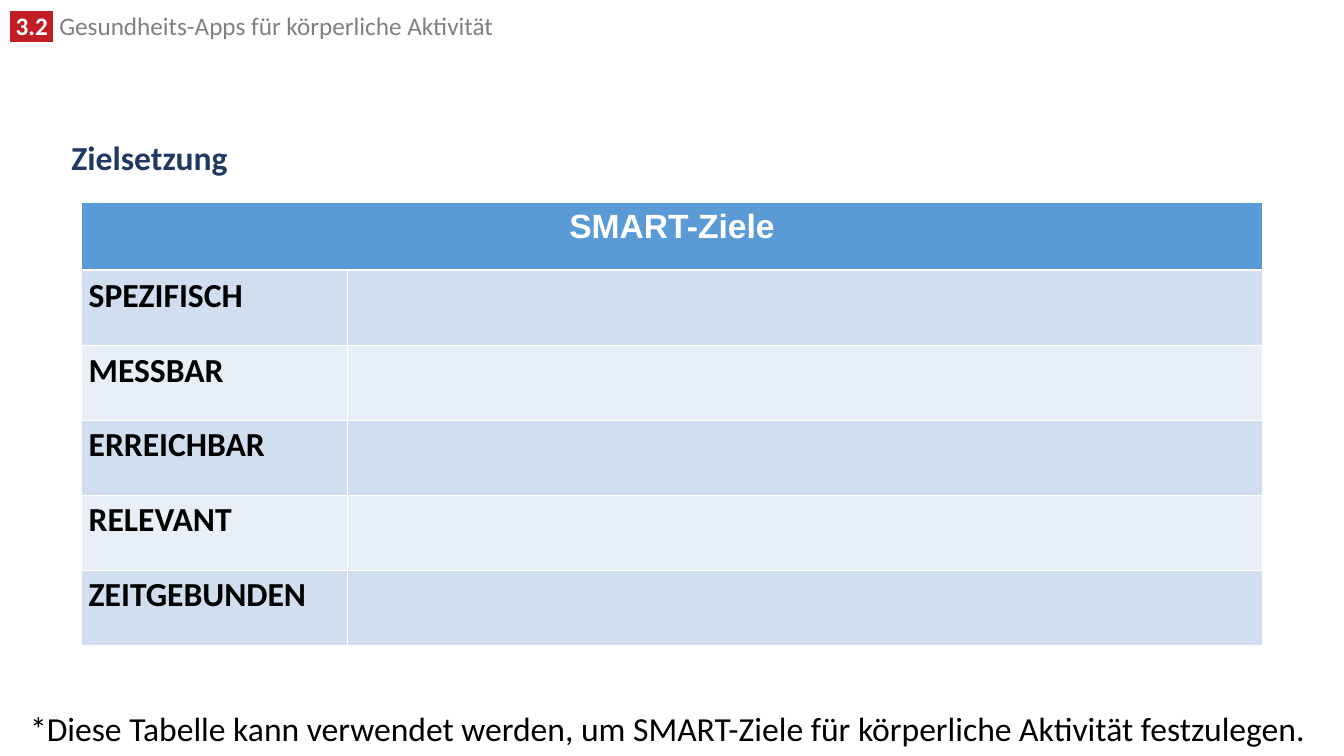
from lxml import etree
from pptx import Presentation, util as u
from pptx.dml.color import RGBColor
from pptx.enum import text
from pptx.oxml.ns import qn

CHAPTER = (" 3.2 ", " Gesundheits-Apps für körperliche Aktivität")
HEADING = "Zielsetzung"
TABLE_TITLE = "SMART-Ziele"
GOALS = ["SPEZIFISCH", "MESSBAR", "ERREICHBAR", "RELEVANT", "ZEITGEBUNDEN"]
FOOTNOTE = ("*Diese Tabelle kann verwendet werden, um SMART-Ziele "
            "für körperliche Aktivität festzulegen.")

WHITE = RGBColor(0xFF, 0xFF, 0xFF)
BLACK = RGBColor(0, 0, 0)
GREY = RGBColor(0x80, 0x80, 0x80)
RED = RGBColor(0xC0, 0x1E, 0x24)
NAVY = RGBColor(0x20, 0x38, 0x64)
BLUE = RGBColor(0x5B, 0x9B, 0xD5)
BANDS = [RGBColor(0xD0, 0xDE, 0xEF), RGBColor(0xE9, 0xEF, 0xF7)]

COLUMNS = (2.64, 9.07)
HEADER_HEIGHT, GOAL_HEIGHT = 0.67, 0.744
THIN, THICK = 0.68, 1.98


def set_font(font, size, color, bold=False, name="Calibri"):
    font.name, font.size, font.bold = name, u.Pt(size), bold
    font.color.rgb = color


def add_text(slide, left, top, width, height, content=""):
    frame = slide.shapes.add_textbox(
        *map(u.Inches, (left, top, width, height))).text_frame
    frame.word_wrap = True
    frame.paragraphs[0].text = content
    return frame


def highlight(run, color):
    mark = etree.Element(qn("a:highlight"))
    etree.SubElement(mark, qn("a:srgbClr"), val=str(color))
    run.font.fill  # the highlight follows the text fill
    run.font._element.find(qn("a:solidFill")).addnext(mark)


def style_cell(cell, fill, top=THIN, bottom=THIN):
    """Fill the cell, set its margins and draw its white borders."""
    cell.fill.solid()
    cell.fill.fore_color.rgb = fill
    cell.margin_left = cell.margin_right = u.Inches(0.07)
    cell.margin_top = cell.margin_bottom = u.Inches(0.05)
    borders = {"a:lnL": THIN, "a:lnR": THIN, "a:lnT": top, "a:lnB": bottom}
    for position, (side, weight) in enumerate(borders.items()):
        line = etree.Element(qn(side), w=str(u.Pt(weight)))
        paint = etree.SubElement(line, qn("a:solidFill"))
        etree.SubElement(paint, qn("a:srgbClr"), val=str(WHITE))
        cell._tc.get_or_add_tcPr().insert(position, line)


def add_goal_table(slide):
    height = HEADER_HEIGHT + GOAL_HEIGHT * len(GOALS)
    table = slide.shapes.add_table(
        len(GOALS) + 1, len(COLUMNS), u.Inches(0.81), u.Inches(2.01),
        u.Inches(sum(COLUMNS)), u.Inches(height)).table
    for column, width in zip(table.columns, COLUMNS):
        column.width = u.Inches(width)
    for index, row in enumerate(table.rows):
        row.height = u.Inches(GOAL_HEIGHT if index else HEADER_HEIGHT)

    header = table.cell(0, 0)
    header.merge(table.cell(0, 1))
    for cell in table.rows[0].cells:
        style_cell(cell, BLUE, bottom=THICK)
    title = header.text_frame.paragraphs[0]
    title.text = TABLE_TITLE
    title.alignment = text.PP_ALIGN.CENTER
    set_font(title.font, 24, WHITE, True, "Arial")

    for index, goal in enumerate(GOALS):
        cells = table.rows[index + 1].cells
        for cell in cells:
            style_cell(cell, BANDS[index % 2], top=THIN if index else THICK)
        label = next(iter(cells)).text_frame.paragraphs[0]
        label.text = goal
        set_font(label.font, 24, BLACK, True)


def main():
    deck = Presentation()
    deck.slide_width, deck.slide_height = u.Inches(13.33), u.Inches(7.5)
    slide = deck.slides.add_slide(deck.slide_layouts[6])

    chapter = add_text(slide, 0, 0.11, 9.52, 0.35).paragraphs[0]
    chapter.line_spacing = 0.8
    number, topic = (chapter.add_run() for _ in CHAPTER)
    number.text, topic.text = CHAPTER
    set_font(number.font, 18, WHITE, True)
    set_font(topic.font, 18, GREY)
    highlight(number, RED)

    heading = add_text(slide, 0.61, 1.18, 12.1, 0.8, HEADING)
    heading.vertical_anchor = text.MSO_ANCHOR.MIDDLE
    heading.paragraphs[0].line_spacing = 0.9
    set_font(heading.paragraphs[0].font, 24, NAVY, True)

    add_goal_table(slide)

    footnote = add_text(slide, 0.2, 6.97, 12.94, 0.37, FOOTNOTE)
    set_font(footnote.paragraphs[0].font, 24, BLACK)

    deck.save("out.pptx")


if __name__ == "__main__":
    main()
